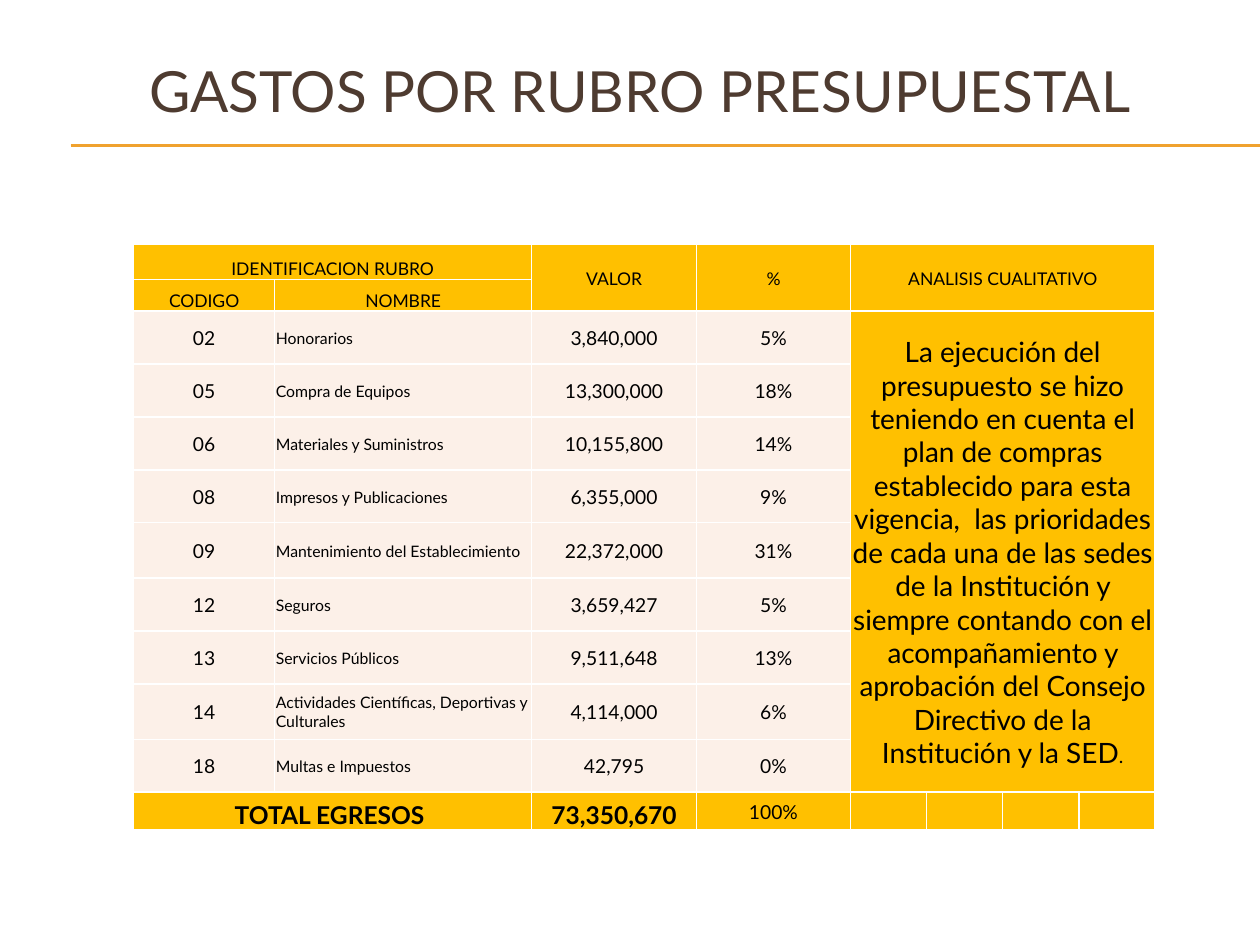
from lxml import etree
from pptx import Presentation, util as u
from pptx.dml.color import RGBColor
from pptx.enum import shapes, text
from pptx.oxml.ns import qn

INK = RGBColor(0, 0, 0)
BROWN = RGBColor(0x4E, 0x3B, 0x30)
ORANGE = RGBColor(0xF0, 0xA2, 0x2E)
GOLD = RGBColor(0xFF, 0xC0, 0x00)
CREAM = RGBColor(0xFC, 0xF0, 0xE8)
WHITE = RGBColor(0xFF, 0xFF, 0xFF)

MID, LEFT = text.PP_ALIGN.CENTER, text.PP_ALIGN.LEFT
CORE, LOW = text.MSO_ANCHOR.MIDDLE, text.MSO_ANCHOR.BOTTOM

WIDE, HIGH = 10, 7.5
COLS = [1.12, 2.04, 1.31, 1.22] + [2.42 / 4] * 4
ROWS = [0.28, 0.25] + [0.42] * 4 + [0.44, 0.42, 0.42, 0.44, 0.42, 0.3]
COSTS = [
    ("02", "Honorarios", "3,840,000", "5%"),
    ("05", "Compra de Equipos", "13,300,000", "18%"),
    ("06", "Materiales y Suministros", "10,155,800", "14%"),
    ("08", "Impresos y Publicaciones", "6,355,000", "9%"),
    ("09", "Mantenimiento del Establecimiento", "22,372,000", "31%"),
    ("12", "Seguros", "3,659,427", "5%"),
    ("13", "Servicios Públicos", "9,511,648", "13%"),
    ("14", "Actividades Científicas, Deportivas y Culturales", "4,114,000", "6%"),
    ("18", "Multas e Impuestos", "42,795", "0%"),
]
NOTE = ("La ejecución del presupuesto se hizo teniendo en cuenta el plan de compras "
        "establecido para esta vigencia,  las prioridades de cada una de las sedes de "
        "la Institución y siempre contando con el acompañamiento y aprobación del "
        "Consejo Directivo de la Institución y la SED")


class Deck:
    font = "Lato"

    def __init__(self, wide, high):
        self.prs = Presentation()
        self.prs.slide_width, self.prs.slide_height = u.Inches(wide), u.Inches(high)
        self.slide = self.prs.slides.add_slide(self.prs.slide_layouts[6])

    def place(self, x, y):
        """Turn shares of the slide's size into lengths."""
        return int(self.prs.slide_width * x), int(self.prs.slide_height * y)

    def style(self, run, size, color=INK, bold=False):
        run.font.name, run.font.size, run.font.bold = self.font, u.Pt(size), bold
        run.font.color.rgb = color

    def title(self, words, x, y, w, h, size):
        box = self.slide.shapes.add_textbox(*self.place(x, y), *self.place(w, h))
        frame = box.text_frame
        frame.word_wrap, frame.vertical_anchor = True, CORE
        frame.margin_top = frame.margin_bottom = 0
        frame.text = words
        frame.paragraphs[0].alignment = MID
        self.style(frame.paragraphs[0].runs[0], size, BROWN)

    def rule(self, x, y, end):
        line = self.slide.shapes.add_connector(
            shapes.MSO_CONNECTOR.STRAIGHT, *self.place(x, y), *self.place(end, y))
        line.line.color.rgb, line.line.width = ORANGE, u.Pt(0.75)
        etree.SubElement(line._element.spPr, qn("a:effectLst"))

    def table(self, x, y, cols, rows):
        size = u.Inches(sum(cols)), u.Inches(sum(rows))
        grid = self.slide.shapes.add_table(
            len(rows), len(cols), *self.place(x, y), *size).table
        for col, w in zip(grid.columns, cols):
            col.width = u.Inches(w)
        for row, h in zip(grid.rows, rows):
            row.height = u.Inches(h)
        for cell in grid.iter_cells():
            self.frame(cell)
        self.grid = grid

    def frame(self, cell):
        """Give a cell thin margins, white borders and a gold fill."""
        cell.margin_left = cell.margin_right = cell.margin_top = u.Inches(0.01)
        cell.margin_bottom = 0
        props = cell._tc.get_or_add_tcPr()
        for side in ("lnL", "lnR", "lnT", "lnB"):
            edge = etree.SubElement(props, qn("a:" + side), w=str(u.Pt(1)))
            paint = etree.SubElement(edge, qn("a:solidFill"))
            etree.SubElement(paint, qn("a:srgbClr"), val=str(WHITE))
        cell.fill.solid()
        cell.fill.fore_color.rgb = GOLD
        # Keep empty cells from stretching their row
        para = cell.text_frame.paragraphs[0]._p
        etree.SubElement(para, qn("a:endParaRPr"), sz="1000")

    def cell(self, row, col, words, size=10, span=(1, 1), align=MID,
             anchor=CORE, fill=GOLD, bold=False):
        cell = self.grid.cell(row, col)
        if span != (1, 1):
            cell.merge(self.grid.cell(row + span[0] - 1, col + span[1] - 1))
        cell.vertical_anchor = anchor
        cell.fill.fore_color.rgb = fill
        para = cell.text_frame.paragraphs[0]
        para.text, para.alignment = words, align
        self.style(para.runs[0], size, bold=bold)
        return para


def main():
    deck = Deck(WIDE, HIGH)

    # Title above a double rule
    for y in (1.15, 1.16):
        deck.rule(0.56 / WIDE, y / HIGH, 1)
    deck.title("GASTOS POR RUBRO PRESUPUESTAL",
               0.33 / WIDE, 0.42 / HIGH, 0.95, 0.58 / HIGH, 32.4)

    # Table heading
    deck.table(1.06 / WIDE, 1.94 / HIGH, COLS, ROWS)
    deck.cell(0, 0, "IDENTIFICACION RUBRO", span=(1, 2), anchor=LOW)
    deck.cell(0, 2, "VALOR", span=(2, 1))
    deck.cell(0, 3, "%", span=(2, 1))
    deck.cell(0, 4, "ANALISIS CUALITATIVO", span=(2, 4))
    for col, name in enumerate(("CODIGO", "NOMBRE")):
        deck.cell(1, col, name, anchor=LOW)

    # Spending lines
    for row, cost in enumerate(COSTS, 2):
        for col, words in enumerate(cost):
            size, align = (9, LEFT) if col == 1 else (11, MID)
            deck.cell(row, col, words, size, align=align, fill=CREAM)

    # Analysis, ending in a smaller full stop
    note = deck.cell(2, 4, NOTE, 16, span=(len(COSTS), 4))
    stop = note.add_run()
    stop.text = "."
    deck.style(stop, 11)

    # Total
    last = len(ROWS) - 1
    deck.cell(last, 0, "TOTAL EGRESOS ", 14, span=(1, 2), anchor=LOW, bold=True)
    deck.cell(last, 2, "73,350,670", 14, anchor=LOW, bold=True)
    deck.cell(last, 3, "100%", 11)

    deck.prs.save("out.pptx")


if __name__ == "__main__":
    main()
